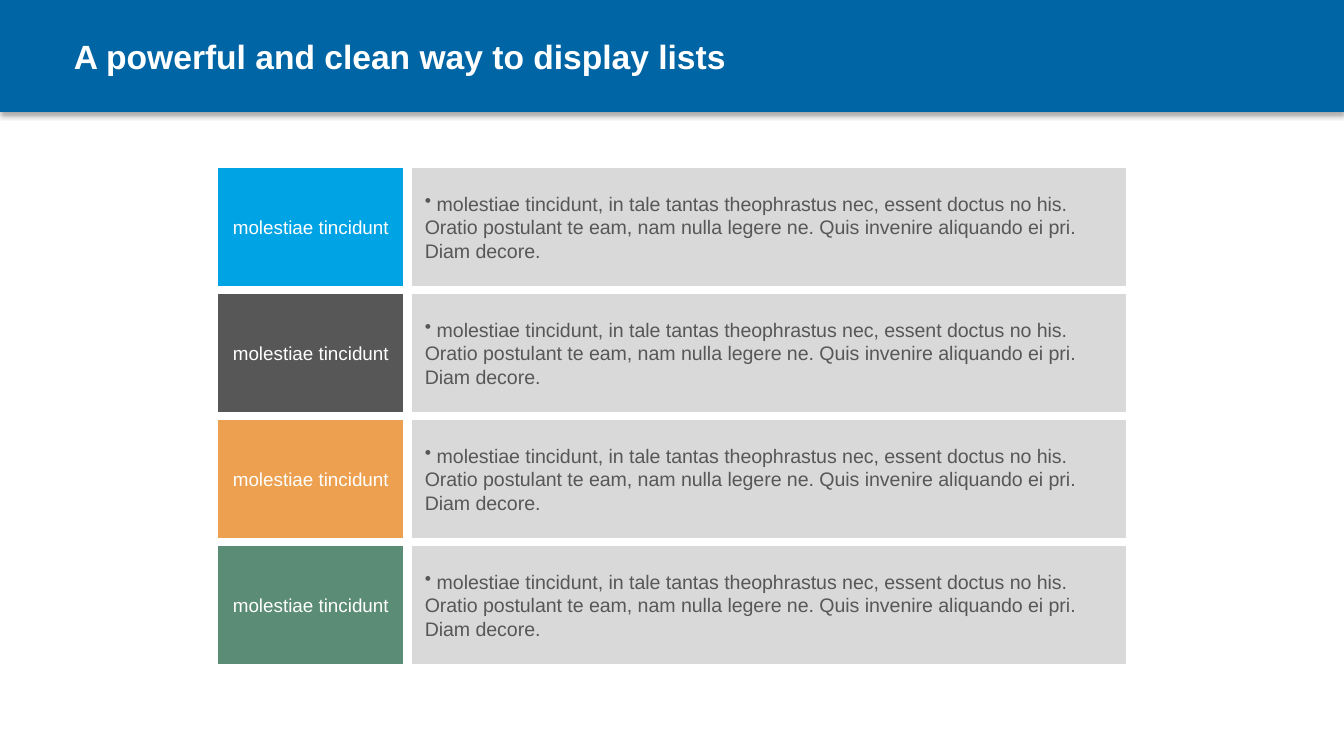
from lxml import etree
from pptx import Presentation
from pptx.dml.color import RGBColor
from pptx.enum.shapes import MSO_SHAPE as Shape
from pptx.enum.text import MSO_ANCHOR as Anchor, PP_ALIGN as Align
from pptx.oxml import parse_xml
from pptx.oxml.ns import nsdecls, qn
from pptx.util import Pt

LABEL = "molestiae tincidunt"
DETAIL = (" molestiae tincidunt, in tale tantas theophrastus nec, essent doctus no his. "
          "Oratio postulant te eam, nam nulla legere ne. Quis invenire aliquando ei pri. "
          "Diam decore.")
ROW_COLORS = ["00A3E3", "575757", "ECA050", "5B8C76"]
ROW_TOP, ROW_STEP, ROW_HEIGHT = 90, 67.5, 63
LABEL_LEFT, LABEL_WIDTH = 117, 99
DETAIL_LEFT, DETAIL_WIDTH = 220.5, 382.5


def color(value):
    return RGBColor.from_string(value)


def add_bullet(paragraph):
    properties = paragraph._p.get_or_add_pPr()
    properties.set("marL", "0")
    properties.set("indent", "0")
    etree.SubElement(properties, qn("a:buSzPct")).set("val", "95000")
    etree.SubElement(properties, qn("a:buChar")).set("char", "•")


def write_text(shape, text, size, text_color, bold=False, align=Align.LEFT,
               anchor=Anchor.MIDDLE, inset=7.2, line_spacing=None, bullet=False):
    frame = shape.text_frame
    frame.word_wrap = True
    frame.vertical_anchor = anchor
    frame.margin_left = frame.margin_right = Pt(inset)
    frame.margin_top = frame.margin_bottom = Pt(3.6)
    paragraph = frame.paragraphs[0]
    paragraph.alignment = align
    if line_spacing:
        paragraph.line_spacing = line_spacing
    if bullet:
        add_bullet(paragraph)
    run = paragraph.add_run()
    run.text = text
    run.font.name = "Arial"
    run.font.size = Pt(size)
    run.font.bold = bold
    run.font.color.rgb = color(text_color)


def add_box(slide, kind, left, top, width, height, fill):
    shape = slide.shapes.add_shape(kind, Pt(left), Pt(top), Pt(width), Pt(height))
    shape.shadow.inherit = False
    shape.fill.solid()
    shape.fill.fore_color.rgb = color(fill)
    shape.line.fill.background()
    return shape


def add_header_band(slide):
    """Add the blue band with a soft shadow, behind everything else."""
    band = add_box(slide, Shape.RECTANGLE, 0, 0, 720, 60, "0065A4")
    effects = band._element.spPr.find(qn("a:effectLst"))
    effects.append(parse_xml(
        f'<a:outerShdw {nsdecls("a")} blurRad="{Pt(3)}" dist="{Pt(1.8)}" dir="5400000" '
        'algn="t" rotWithShape="0"><a:srgbClr val="000000"><a:alpha val="35000"/>'
        '</a:srgbClr></a:outerShdw>'))
    slide.shapes._spTree.insert(2, band._element)


def add_title(slide, text):
    title = slide.shapes.title
    title.left, title.top, title.width, title.height = Pt(36), Pt(0.5), Pt(648), Pt(44)
    write_text(title, text, 18, "FFFFFF", bold=True, anchor=Anchor.BOTTOM,
               inset=3.6, line_spacing=0.9)


def add_row(slide, top, fill):
    detail = add_box(slide, Shape.FLOWCHART_PROCESS, DETAIL_LEFT, top,
                     DETAIL_WIDTH, ROW_HEIGHT, "D9D9D9")
    write_text(detail, DETAIL, 10.5, "575757", bullet=True)
    label = add_box(slide, Shape.FLOWCHART_PROCESS, LABEL_LEFT, top,
                    LABEL_WIDTH, ROW_HEIGHT, fill)
    write_text(label, LABEL, 10.1, "FFFFFF", align=Align.CENTER, inset=5)


def main():
    presentation = Presentation()
    presentation.slide_width, presentation.slide_height = Pt(720), Pt(405)
    slide = presentation.slides.add_slide(presentation.slide_layouts[5])
    add_header_band(slide)
    add_title(slide, "A powerful and clean way to display lists")
    for index, fill in enumerate(ROW_COLORS):
        add_row(slide, ROW_TOP + index * ROW_STEP, fill)
    presentation.save("out.pptx")


if __name__ == "__main__":
    main()
